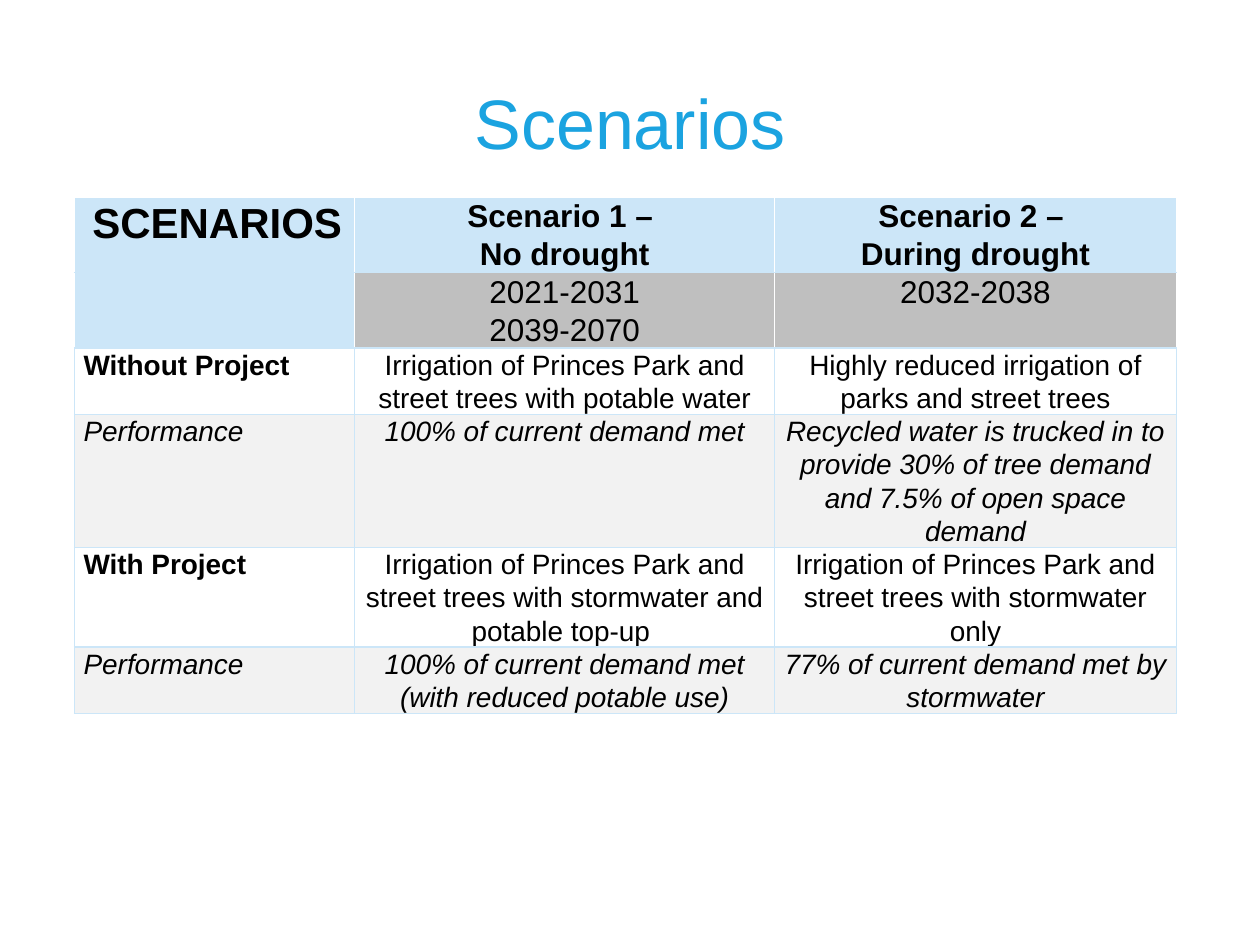
from lxml.etree import SubElement
from pptx import Presentation
from pptx.dml.color import RGBColor
from pptx.enum.text import MSO_ANCHOR, PP_ALIGN
from pptx.oxml.ns import qn
from pptx.util import Pt

FONT = "Arial"
COLORS = {"title": "1BA3E0", "text": "000000", "white": "FFFFFF",
          "header": "CCE6F8", "years": "BFBFBF", "performance": "F2F2F2"}
COLUMN_WIDTHS = [160, 240, 229.5]
ROW_HEIGHT = 29.5

# Each cell is a list of paragraphs
ROWS = [
    [["SCENARIOS"], ["Scenario 1 – ", "No drought"],
     ["Scenario 2 – ", "During drought"]],
    [[], ["2021-2031", "2039-2070"], ["2032-2038"]],
    [["Without Project"],
     ["Irrigation of Princes Park and street trees with potable water"],
     ["Highly reduced irrigation of parks and street trees"]],
    [["Performance"], ["100% of current demand met"],
     ["Recycled water is trucked in to provide 30% of tree demand "
      "and 7.5% of open space demand"]],
    [["With Project"],
     ["Irrigation of Princes Park and street trees with stormwater "
      "and potable top-up "],
     ["Irrigation of Princes Park and street trees with stormwater only"]],
    [["Performance"], ["100% of current demand met (with reduced potable use)"],
     ["77% of current demand met by stormwater"]],
]


def add_span(para, text, size, color="text", bold=False, italic=False):
    span = para.add_run()
    span.text = text
    font = span.font
    font.name, font.size, font.bold, font.italic = FONT, Pt(size), bold, italic
    font.color.rgb = RGBColor.from_string(COLORS[color])


def add_title(page, text):
    box = page.shapes.title
    box.left, box.top, box.width, box.height = Pt(36), Pt(21.6), Pt(648), Pt(90)
    frame = box.text_frame
    frame.vertical_anchor = MSO_ANCHOR.MIDDLE
    frame.margin_top = Pt(9.6)
    para = frame.paragraphs[0]
    para.alignment = PP_ALIGN.CENTER
    add_span(para, text, 40, "title")


def set_borders(cell, row):
    side = "white" if row < 2 else "header"
    top = "white" if row == 0 else "header"
    properties = cell._tc.get_or_add_tcPr()
    for tag, color in (("lnL", side), ("lnR", side), ("lnT", top), ("lnB", "header")):
        line = SubElement(properties, qn(f"a:{tag}"), w=str(Pt(1)))
        fill = SubElement(line, qn("a:solidFill"))
        SubElement(fill, qn("a:srgbClr"), val=COLORS[color])


def set_fill(cell, row, column):
    if row == 0 or (row == 1 and column == 0):
        color = "header"
    elif row == 1:
        color = "years"
    elif row % 2:
        color = "performance"
    else:
        cell.fill.background()
        return
    cell.fill.solid()
    cell.fill.fore_color.rgb = RGBColor.from_string(COLORS[color])


def fill_cell(cell, row, column, lines):
    cell.margin_left = cell.margin_right = Pt(5.1)
    cell.margin_top = cell.margin_bottom = Pt(0)
    set_borders(cell, row)
    set_fill(cell, row, column)
    corner = row == 0 and column == 0
    size = 24 if corner else 18 if row < 2 else 16
    bold = row == 0 or (column == 0 and row % 2 == 0)
    italic = row > 2 and row % 2 == 1
    for index, text in enumerate(lines):
        frame = cell.text_frame
        para = frame.add_paragraph() if index else frame.paragraphs[0]
        para.line_spacing = 1.07
        para.alignment = PP_ALIGN.CENTER if column else PP_ALIGN.LEFT
        if corner:
            add_span(para, " ", 18, "white", bold=True)
        add_span(para, text, size, bold=bold, italic=italic)


def add_scenario_table(page):
    holder = page.shapes.add_table(len(ROWS), len(COLUMN_WIDTHS), Pt(42.7), Pt(112.5),
                                   Pt(sum(COLUMN_WIDTHS)), Pt(ROW_HEIGHT * len(ROWS)))
    table = holder.table
    table.first_row = table.horz_banding = False
    for column, width in zip(table.columns, COLUMN_WIDTHS):
        column.width = Pt(width)
    for row, cells in enumerate(ROWS):
        table.rows[row].height = Pt(ROW_HEIGHT)
        for column, lines in enumerate(cells):
            fill_cell(table.cell(row, column), row, column, lines)
    # The rows grow with their text to about this height
    holder.height = Pt(318.2)


def main():
    deck = Presentation()
    deck.slide_width, deck.slide_height = Pt(720), Pt(540)
    page = deck.slides.add_slide(deck.slide_layouts[5])
    add_title(page, "Scenarios")
    add_scenario_table(page)
    deck.save("out.pptx")


if __name__ == "__main__":
    main()
